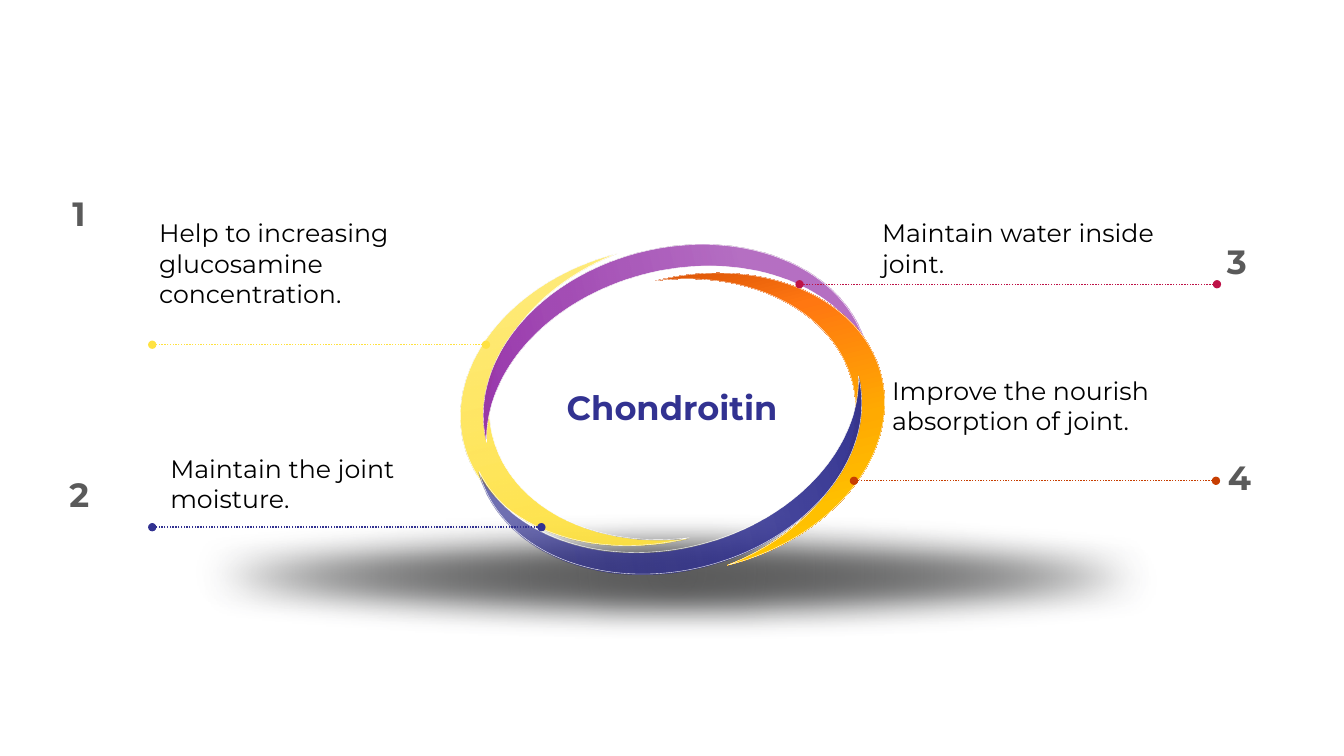
from pptx import Presentation
from pptx.dml.color import RGBColor
from pptx.enum.dml import MSO_LINE
from pptx.enum.shapes import MSO_CONNECTOR, MSO_SHAPE
from pptx.enum.text import PP_ALIGN
from pptx.oxml import parse_xml
from pptx.oxml.ns import nsdecls, qn
from pptx.util import Inches, Pt

FONT = "Montserrat"
BLACK = RGBColor(0x00, 0x00, 0x00)
WHITE = RGBColor(0xFF, 0xFF, 0xFF)
GREY = RGBColor(0x5A, 0x5A, 0x5A)
SHADOW_GREY = RGBColor(0x53, 0x54, 0x55)
PALE_BLUE = RGBColor(0xDD, 0xF0, 0xFE)
YELLOW = RGBColor(0xFF, 0xE2, 0x41)
PURPLE = RGBColor(0x96, 0x32, 0xAA)
NAVY = RGBColor(0x32, 0x32, 0x91)
CRIMSON = RGBColor(0xBE, 0x12, 0x47)
RUST = RGBColor(0xC7, 0x3E, 0x01)
ORANGE = RGBColor(0xFF, 0x77, 0x11)
AMBER = RGBColor(0xFF, 0xAA, 0x01)
GOLD = RGBColor(0xFF, 0xC0, 0x00)
LIGHT_GOLD = RGBColor(0xFE, 0xCE, 0x02)

# Callouts: number and its place, text and its box, line ends, line colour
CALLOUTS = [
    ("1", (0.62, 1.86), "Help to increasing glucosamine concentration.",
     (1.48, 2.11, 3.52, 1.01), (4.82, 1.51, 3.42), YELLOW),
    ("2", (0.59, 4.65), "Maintain the joint moisture.",
     (1.59, 4.45, 3.21, 0.71), (5.37, 1.51, 5.23), NAVY),
    ("3", (12.07, 2.34), "Maintain water inside joint.",
     (8.65, 2.11, 3.23, 0.71), (12.07, 7.93, 2.82), CRIMSON),
    ("4", (12.08, 4.48), "Improve the nourish absorption of joint.",
     (8.75, 3.67, 3.85, 0.71), (12.06, 8.47, 4.77), RUST),
]


def add_text(shapes, text, box, size=18, color=BLACK, bold=False, align=PP_ALIGN.LEFT):
    text_box = shapes.add_textbox(*(Inches(length) for length in box))
    text_box.text_frame.word_wrap = True
    para = text_box.text_frame.paragraphs[0]
    para.alignment = align
    span = para.add_run()
    span.text = text
    span.font.name, span.font.size = FONT, Pt(size)
    span.font.bold, span.font.color.rgb = bold, color


def set_gradient(shape, stops, angle=None):
    """Fill with (position, colour, opacity) stops; without an angle, from the centre."""
    shape.fill.gradient()
    stop_xml = "".join(
        f'<a:gs pos="{position * 1000}"><a:srgbClr val="{color}">'
        f'<a:alpha val="{opacity * 1000}"/></a:srgbClr></a:gs>'
        for position, color, opacity in stops)
    if angle is None:
        direction = ('<a:path path="circle"><a:fillToRect l="50000" t="50000" '
                     'r="50000" b="50000"/></a:path>')
    else:
        direction = f'<a:lin ang="{angle * 60000}" scaled="0"/>'
    properties = shape._element.spPr
    properties.replace(properties.find(qn("a:gradFill")), parse_xml(
        f'<a:gradFill {nsdecls("a")} rotWithShape="1"><a:gsLst>{stop_xml}</a:gsLst>'
        f'{direction}</a:gradFill>'))


def add_floor_shadow(page, box):
    ellipse = page.shapes.add_shape(MSO_SHAPE.OVAL, *(Inches(length) for length in box))
    ellipse.line.fill.background()
    set_gradient(ellipse, [(0, GREY, 100), (73, GREY, 50), (100, PALE_BLUE, 100)])
    ellipse.shadow.inherit = False
    effects = ellipse._element.spPr.find(qn("a:effectLst"))
    effects.append(parse_xml(
        f'<a:outerShdw {nsdecls("a")} blurRad="0" dist="{Pt(8.5)}" dir="2700000">'
        f'<a:srgbClr val="{SHADOW_GREY}"/></a:outerShdw>'))
    effects.append(parse_xml(f'<a:softEdge {nsdecls("a")} rad="{Pt(25)}"/>'))


def add_ring(page, box):
    left, top, width, height = box
    center_x, center_y = left + width / 2, top + height / 2
    group = page.shapes.add_group_shape()
    sunset = [(0, RUST, 100), (27, ORANGE, 100), (59, AMBER, 100),
              (80, GOLD, 100), (100, LIGHT_GOLD, 100)]
    side, flat = (1.94, 2.91), (1.46, 3.88)
    # Four crescents: offset of the centre, size, rotation, stops, gradient angle
    crescents = [
        (-1.13, 0.1, side, 345.9, [(12, YELLOW, 70), (100, YELLOW, 100)], 90),
        (-0.14, -0.85, flat, 75.9, [(30, PURPLE, 70), (100, PURPLE, 100)], 90),
        (1.13, -0.1, side, 165.9, sunset, 270),
        (0.14, 0.85, flat, 255.9, [(12, NAVY, 70), (100, NAVY, 100)], 90),
    ]
    for shift_x, shift_y, (wide, high), rotation, stops, angle in crescents:
        moon = group.shapes.add_shape(
            MSO_SHAPE.MOON, Inches(center_x + shift_x - wide / 2),
            Inches(center_y + shift_y - high / 2), Inches(wide), Inches(high))
        moon.adjustments[0] = 0.152
        moon.rotation = rotation
        moon.shadow.inherit = False
        set_gradient(moon, stops, angle)
        moon.line.color.rgb, moon.line.width = WHITE, Pt(0.25)
    # Name in the middle of the ring
    add_text(group.shapes, "Chondroitin", (center_x - 1.67, center_y - 0.27, 3.33, 0.5),
             size=24, color=NAVY, bold=True, align=PP_ALIGN.CENTER)


def add_callout(page, number, number_place, text, text_box, line_ends, color):
    start_x, end_x, line_y = line_ends
    add_text(page.shapes, text, text_box)
    add_text(page.shapes, number, (*number_place, 0.7, 0.5), size=24, color=GREY, bold=True)
    leader = page.shapes.add_connector(MSO_CONNECTOR.STRAIGHT, Inches(start_x), Inches(line_y),
                                       Inches(end_x), Inches(line_y))
    leader.line.color.rgb, leader.line.width = color, Pt(1)
    leader.line.dash_style = MSO_LINE.ROUND_DOT
    for end in ("headEnd", "tailEnd"):
        leader.line._get_or_add_ln().append(parse_xml(f'<a:{end} {nsdecls("a")} type="oval"/>'))
    leader._element.spPr.append(parse_xml(f'<a:effectLst {nsdecls("a")}/>'))


def main():
    deck = Presentation()
    deck.slide_width, deck.slide_height = Inches(13.33), Inches(7.5)
    page = deck.slides.add_slide(deck.slide_layouts[6])
    add_floor_shadow(page, (0.68, 5.08, 11.97, 1.19))
    add_ring(page, (4.57, 2.43, 4.2, 3.26))
    for callout in CALLOUTS:
        add_callout(page, *callout)
    deck.save("out.pptx")


if __name__ == "__main__":
    main()
